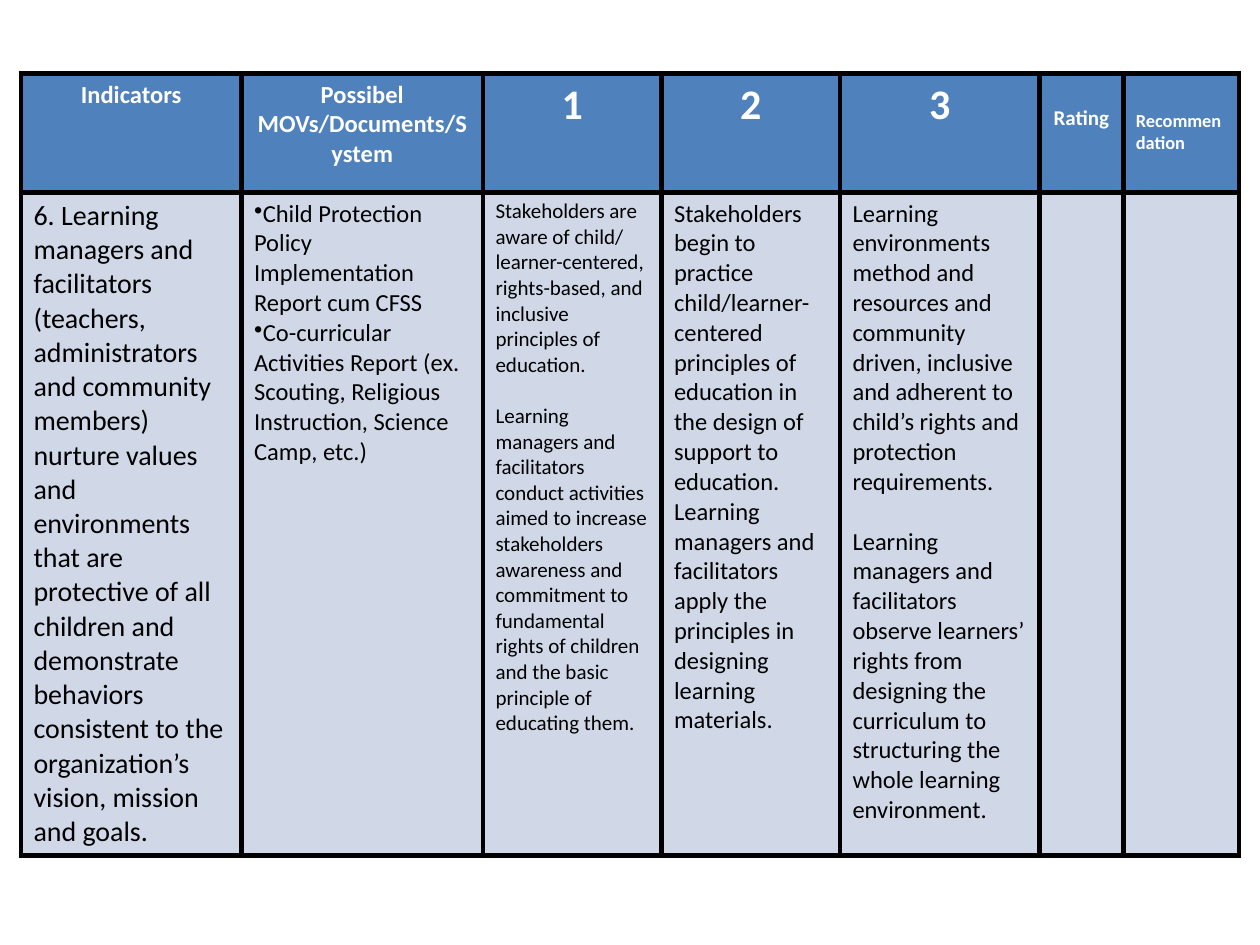
import dataclasses

import lxml.etree
import pptx
import pptx.dml.color
import pptx.enum.text
import pptx.oxml.ns
import pptx.util

Pt = pptx.util.Pt
RGB = pptx.dml.color.RGBColor.from_string
ALIGN = pptx.enum.text.PP_ALIGN
qn = pptx.oxml.ns.qn


@dataclasses.dataclass(frozen=True)
class Theme:
    font: str = "Calibri"
    head_fill: str = "4F81BD"
    head_text: str = "FFFFFF"
    body_fill: str = "D0D8E8"
    body_text: str = "000000"
    border: str = "000000"
    border_width: float = 3
    score: float = 24
    large: float = 16
    medium: float = 14
    small: float = 12
    tiny: float = 10.5


THEME = Theme()
COLUMNS = [126, 138, 102, 102, 114, 48, 66]
ROWS = [68, 379]

HEADERS = [
    {"paras": ["Indicators"], "size": THEME.medium},
    {"paras": ["Possibel MOVs/Documents/System"], "size": THEME.medium},
    {"paras": ["1"], "size": THEME.score},
    {"paras": ["2"], "size": THEME.score},
    {"paras": ["3"], "size": THEME.score},
    {"paras": ["Rating"], "size": THEME.small, "top": 18.2},
    {"paras": ["Recommendation"], "size": THEME.tiny, "top": 20.7,
     "align": ALIGN.LEFT},
]

DETAILS = [
    {"paras": [
        "6. Learning managers and facilitators (teachers, administrators and "
        "community members) nurture values and environments that are "
        "protective of all children and demonstrate behaviors consistent to "
        "the organization’s vision, mission and goals."],
     "size": THEME.large},
    {"paras": [
        "Child Protection Policy Implementation Report cum CFSS",
        "Co-curricular Activities Report (ex. Scouting, Religious "
        "Instruction, Science Camp, etc.)"],
     "size": THEME.medium, "bullet": "•"},
    {"paras": [
        "Stakeholders are aware of child/ learner-centered, rights-based, "
        "and inclusive principles of education.",
        "Learning managers and facilitators conduct activities aimed to "
        "increase stakeholders awareness and commitment to fundamental "
        "rights of children and the basic principle of educating them."],
     "size": THEME.small, "gap": 14.6},
    {"paras": [
        "Stakeholders begin to practice child/learner-centered principles of "
        "education in the design of support to education. Learning managers "
        "and facilitators apply the principles in designing learning "
        "materials."],
     "size": THEME.medium},
    {"paras": [
        "Learning environments method and resources and community driven, "
        "inclusive and adherent to child’s rights and protection "
        "requirements.",
        "Learning managers and facilitators observe learners’ rights from "
        "designing the curriculum to structuring the whole learning "
        "environment."],
     "size": THEME.medium, "gap": 17.1},
    {},
    {},
]


def set_attrs(obj, values):
    for name, value in values.items():
        setattr(obj, name, value)


def add_borders(cell):
    tcPr = cell._tc.get_or_add_tcPr()
    for side in ("lnL", "lnR", "lnT", "lnB"):
        ln = lxml.etree.SubElement(tcPr, qn(f"a:{side}"),
                                   w=str(Pt(THEME.border_width)))
        fill = lxml.etree.SubElement(ln, qn("a:solidFill"))
        lxml.etree.SubElement(fill, qn("a:srgbClr"), val=THEME.border)


def add_bullet(p, char):
    pPr = p._p.get_or_add_pPr()
    pPr.set("marL", "0")
    pPr.set("indent", "0")
    lxml.etree.SubElement(pPr, qn("a:buChar"), char=char)


def fill_cell(cell, content, fill, color, bold, align):
    add_borders(cell)
    cell.fill.solid()
    cell.fill.fore_color.rgb = RGB(fill)
    set_attrs(cell, {"margin_left": Pt(7.2), "margin_right": Pt(7.2),
                     "margin_top": Pt(content.get("top", 3.6)),
                     "margin_bottom": Pt(3.6)})
    tf = cell.text_frame
    for i, text in enumerate(content.get("paras", [])):
        p = tf.add_paragraph() if i else tf.paragraphs[0]
        p.alignment = content.get("align", align)
        if i and "gap" in content:
            p.space_before = Pt(content["gap"])
        if "bullet" in content:
            add_bullet(p, content["bullet"])
        r = p.add_run()
        r.text = text
        set_attrs(r.font, {"name": THEME.font, "size": Pt(content["size"]),
                           "bold": bold})
        r.font.color.rgb = RGB(color)


def add_rubric_table(s, left, top, width, height):
    table = s.shapes.add_table(len(ROWS), len(COLUMNS), Pt(left), Pt(top),
                               Pt(width), Pt(height)).table
    for column, share in zip(table.columns, COLUMNS):
        column.width = Pt(width * share / sum(COLUMNS))
    for row, share in zip(table.rows, ROWS):
        row.height = Pt(height * share / sum(ROWS))
    styles = [
        (HEADERS, THEME.head_fill, THEME.head_text, True, ALIGN.CENTER),
        (DETAILS, THEME.body_fill, THEME.body_text, False, ALIGN.LEFT),
    ]
    for row, (contents, *style) in zip(table.rows, styles):
        for cell, content in zip(row.cells, contents):
            fill_cell(cell, content, *style)


def main():
    prs = pptx.Presentation()
    set_attrs(prs, {"slide_width": Pt(720), "slide_height": Pt(540)})
    s = prs.slides.add_slide(prs.slide_layouts[6])
    add_rubric_table(s, 12, 42, sum(COLUMNS), sum(ROWS))
    prs.save("out.pptx")


if __name__ == "__main__":
    main()
